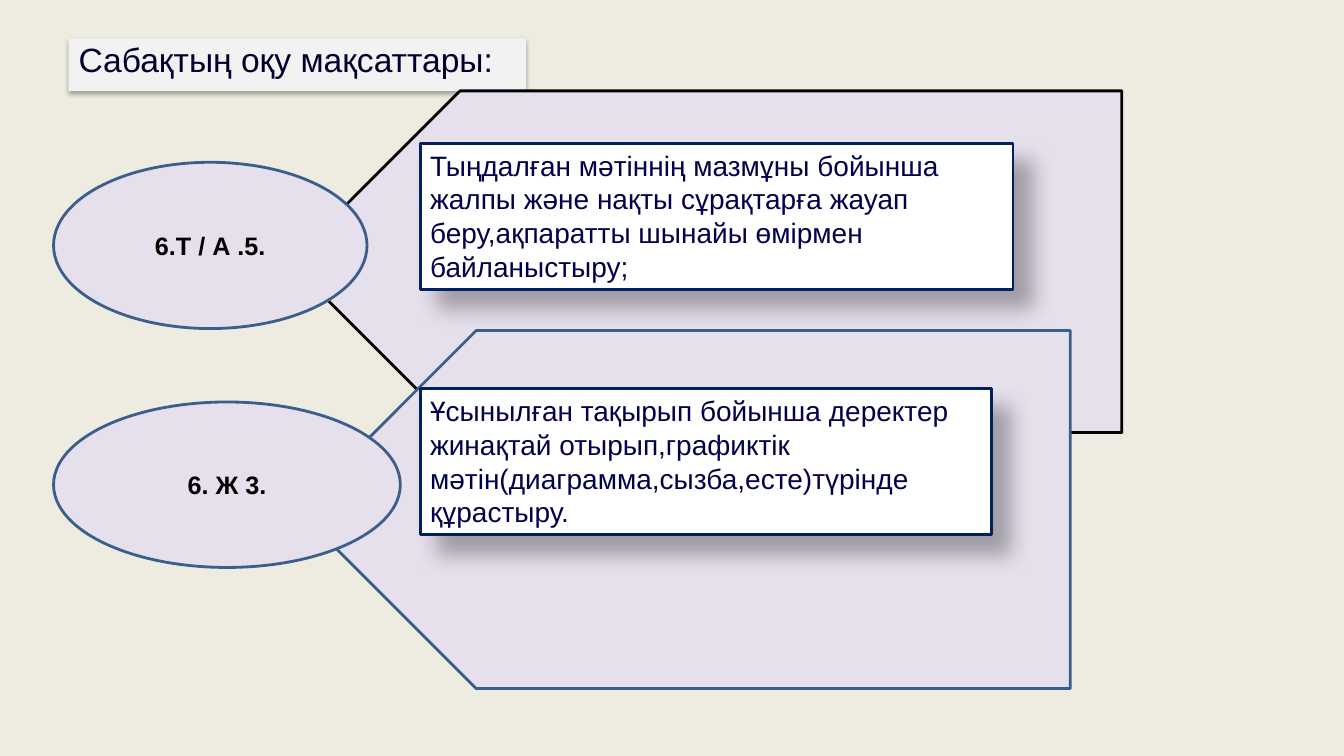
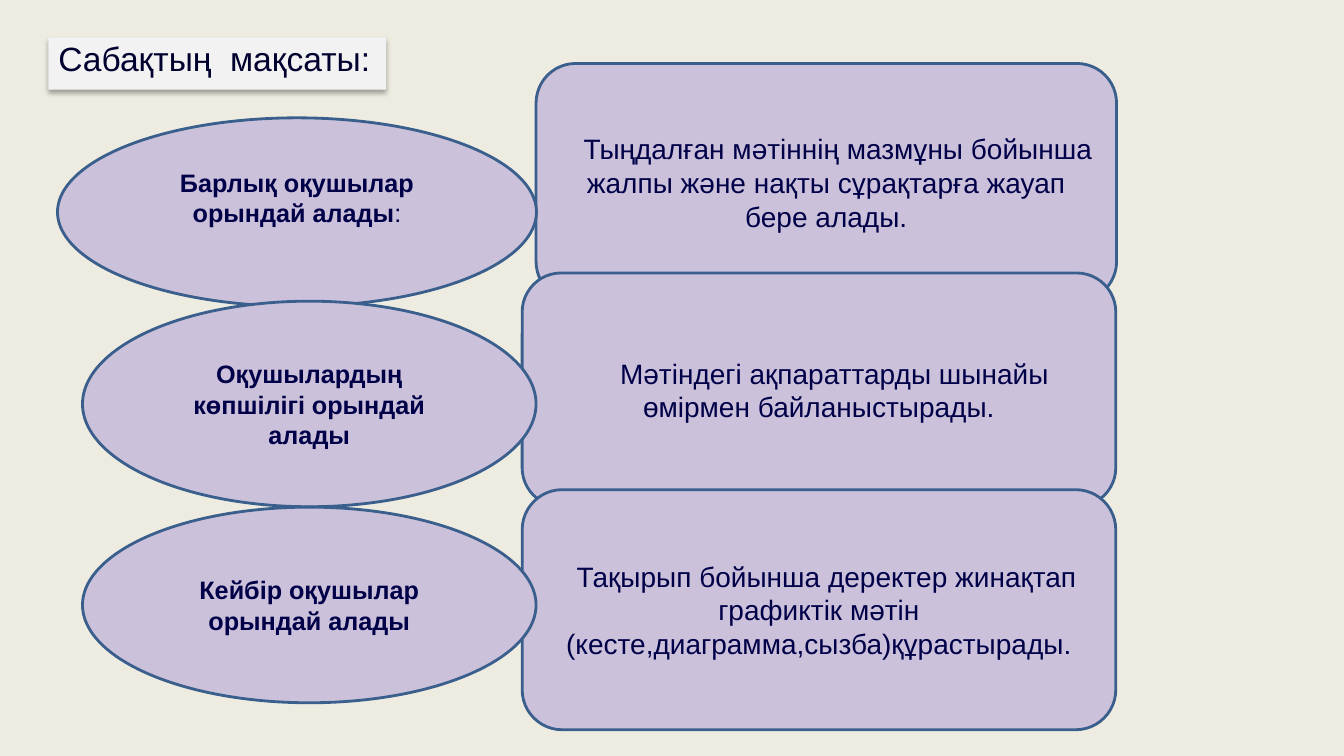
import pptx
import pptx.util
import pptx.dml.color
import pptx.enum.shapes
import pptx.enum.text
import pptx.oxml
import pptx.oxml.ns

Cm = pptx.util.Cm
Pt = pptx.util.Pt
tint = pptx.dml.color.RGBColor.from_string
kinds = pptx.enum.shapes.MSO_SHAPE
align = pptx.enum.text.PP_ALIGN
anchor = pptx.enum.text.MSO_ANCHOR

# Shared look
SAND, GREY, WHITE = "EEECE1", "F2F2F2", "FFFFFF"
PALE, LILAC = "E6E0EC", "CCC1DA"
BLACK, STEEL, NAVY = "000000", "3A5F8C", "002060"
HEAD, BODY, GOAL = "00002E", "00004C", "000048"
# Shadows: opacity in percent, blur and distance in points, angle in degrees
LOW = (32, 3.5, 2.2, 90)
DEEP = (30, 15, 18, 45)


def draw(slide, kind, at, fill, edge=None, shade=None):
    """Add a filled shape; at is left, top, width, height in cm."""
    shape = slide.shapes.add_shape(kind, *[Cm(n) for n in at])
    shape.shadow.inherit = False
    shape.fill.solid()
    shape.fill.fore_color.rgb = tint(fill)
    if edge:
        shape.line.color.rgb = tint(edge)
        shape.line.width = Pt(2)
    else:
        shape.line.fill.background()
    if shade:
        alpha, blur, dist, angle = shade
        effects = shape._element.spPr.find(pptx.oxml.ns.qn("a:effectLst"))
        effects.append(pptx.oxml.parse_xml(
            f'<a:outerShdw {pptx.oxml.ns.nsdecls("a")} blurRad="{Pt(blur)}" '
            f'dist="{Pt(dist)}" dir="{angle * 60000}" algn="tl" rotWithShape="0">'
            f'<a:srgbClr val="{BLACK}"><a:alpha val="{alpha * 1000}"/></a:srgbClr>'
            '</a:outerShdw>'))
    return shape


def write(shape, text, size, color, bold=False, side=align.CENTER, hold=anchor.MIDDLE):
    """Fill a shape with one paragraph and return it."""
    frame = shape.text_frame
    frame.word_wrap = True
    frame.vertical_anchor = hold
    par = frame.paragraphs[0]
    par.add_run().text = text
    par.alignment = side
    par.font.name = "Arial"
    par.font.size = Pt(size)
    par.font.color.rgb = tint(color)
    if bold:
        par.runs[0].font.bold = True
    return par


deck = pptx.Presentation()
deck.slide_width, deck.slide_height = Cm(33.87), Cm(19.05)
ground = deck.slide_master.background.fill
ground.solid()
ground.fore_color.rgb = tint(SAND)

# Slides with their titles
pages = []
for text, at in [
    ("Сабақтың оқу мақсаттары:", (1.73, 0.97, 11.53, 1.32)),
    ("Сабақтың  мақсаты:", (1.22, 0.94, 8.51, 1.32)),
]:
    page = deck.slides.add_slide(deck.slide_layouts[6])
    title = draw(page, kinds.RECTANGLE, at, GREY, shade=LOW)
    write(title, text, 24, HEAD, side=align.LEFT, hold=anchor.TOP).line_spacing = 0.9
    pages.append(page)
aims, goals = pages

# Slide 1: arrows pointing left, each with a code
for code, plate, edge, oval in [
    ("6.Т / А .5.", (7.29, 2.29, 20.98, 8.61), BLACK, (1.35, 4.09, 7.9, 4.19)),
    ("6. Ж 3.", (7.49, 8.33, 19.48, 9.02), STEEL, (1.35, 10.13, 8.74, 4.17)),
]:
    draw(aims, kinds.PENTAGON, plate, PALE, edge).rotation = 180
    write(draw(aims, kinds.OVAL, oval, PALE, STEEL), code, 18, BLACK, bold=True)

# Slide 1: aims on top of the arrows
for text, top, width in [
    ("Тыңдалған мәтіннің мазмұны бойынша жалпы және нақты сұрақтарға жауап "
     "беру,ақпаратты шынайы өмірмен байланыстыру;", 3.61, 14.94),
    ("Ұсынылған тақырып бойынша деректер жинақтай отырып,графиктік "
     "мәтін(диаграмма,сызба,есте)түрінде құрастыру.", 9.8, 14.4),
]:
    card = draw(aims, kinds.RECTANGLE, (10.59, top, width, 3.68), WHITE, NAVY, DEEP)
    write(card, text, 20, BODY, side=align.LEFT, hold=anchor.TOP)

# Slide 2: who reaches which goal
pars = []
for who, oval, goal, card, indent in [
    ("Барлық оқушылар орындай алады", (1.45, 2.97, 12.07, 4.75),
     "Тыңдалған мәтіннің мазмұны бойынша жалпы және нақты сұрақтарға жауап бере алады.",
     (13.51, 1.6, 14.63, 5.99), 0.59),
    ("Оқушылардың көпшілігі орындай алады", (2.08, 7.59, 11.43, 5.18),
     "Мәтіндегі ақпараттарды шынайы өмірмен байланыстырады.",
     (13.16, 6.88, 14.96, 5.89), 0.78),
    ("Кейбір оқушылар орындай алады", (2.08, 12.78, 11.43, 4.93),
     "Тақырып бойынша деректер жинақтап графиктік мәтін "
     "(кесте,диаграмма,сызба)құрастырады.",
     (13.16, 12.34, 14.96, 6.05), 0.39),
]:
    box = draw(goals, kinds.ROUNDED_RECTANGLE, card, LILAC, STEEL)
    par = write(box, goal, 20, GOAL)
    par._p.get_or_add_pPr().set("indent", str(Cm(indent)))
    group = draw(goals, kinds.OVAL, oval, LILAC, STEEL)
    pars.append((group, write(group, who, 18, GOAL, bold=True)))

# The first group sits higher and ends in a plain colon
group, par = pars[0]
group.text_frame.margin_bottom = Cm(0.86)
par.add_run().text = ":"

deck.save("out.pptx")
